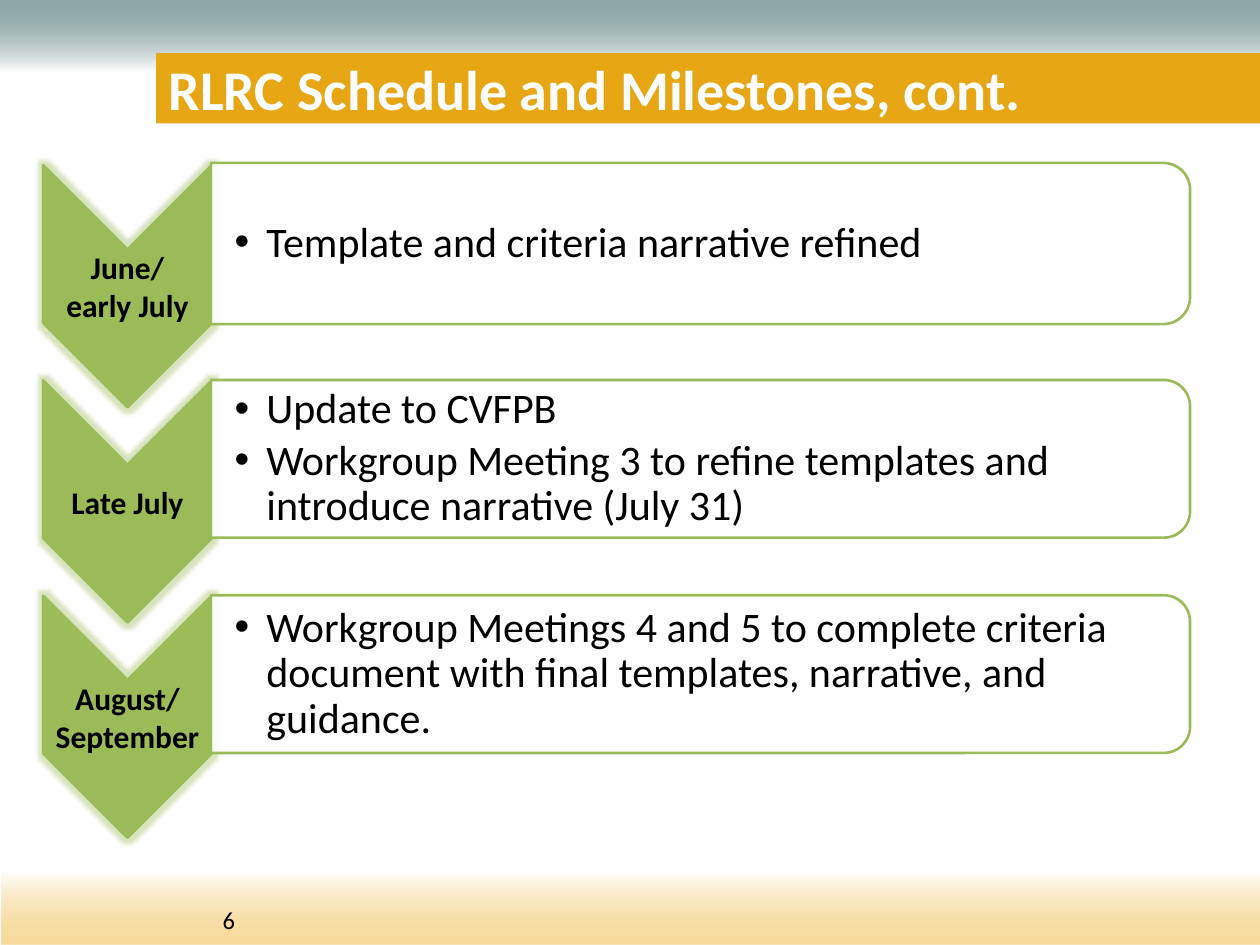
from dataclasses import dataclass

import lxml.etree
import pptx
import pptx.dml.color
import pptx.enum.shapes
import pptx.enum.text
import pptx.oxml
import pptx.oxml.ns
import pptx.util
from pptx.util import Cm, Pt

RGBColor = pptx.dml.color.RGBColor
ShapeType = pptx.enum.shapes.MSO_SHAPE
Anchor = pptx.enum.text.MSO_ANCHOR
Align = pptx.enum.text.PP_ALIGN
AutoSize = pptx.enum.text.MSO_AUTO_SIZE
qn = pptx.oxml.ns.qn

TEAL = RGBColor(0x21, 0x53, 0x52)
GOLD = RGBColor(0xEE, 0xB8, 0x40)
ORANGE = RGBColor(0xE7, 0xA6, 0x14)
GREEN = RGBColor(0x9B, 0xBB, 0x59)
WHITE = RGBColor(0xFF, 0xFF, 0xFF)
BLACK = RGBColor(0x00, 0x00, 0x00)

FONT = "Calibri"
FIRST_PANEL_CENTER = 4.91
ROW_PITCH = 4.34
CHEVRON_DROP = 0.86
CHEVRON_CENTER_X = 2.57
CHEVRON_LENGTH = 4.88
CHEVRON_WIDTH = 3.4
LABEL_HEIGHT = 1.47
PANEL_CENTER_X = 14.12
PANEL_LENGTH = 19.74
LIST_MARGIN = 0.16


@dataclass
class Band:
    left: float
    top: float
    width: float
    height: float
    color: RGBColor
    angle: int


@dataclass
class Milestone:
    label: list[str]
    items: list[str]
    placeholder_index: int
    panel_height: float


BANDS = [
    Band(-0.03, 0, 25.48, 2.77, TEAL, 270),
    Band(0.03, 16.23, 25.37, 2.82, GOLD, 90),
]

MILESTONES = [
    Milestone(["June/", "early July"], ["Template and criteria narrative refined"], 1, 3.25),
    Milestone(
        ["Late July"],
        [
            "Update to CVFPB",
            "Workgroup Meeting 3 to refine templates and introduce narrative (July 31)",
        ],
        2,
        3.18,
    ),
    Milestone(
        ["August/", "September"],
        [
            "Workgroup Meetings 4 and 5 to complete criteria document "
            "with final templates, narrative, and guidance."
        ],
        3,
        3.18,
    ),
]


def place(shape, left: float, top: float, width: float, height: float) -> None:
    shape.left, shape.top = Cm(left), Cm(top)
    shape.width, shape.height = Cm(width), Cm(height)


def add_run(paragraph, text: str, size: float, color: RGBColor, bold: bool = False) -> None:
    run = paragraph.add_run()
    run.text = text
    run.font.name = FONT
    run.font.size = Pt(size)
    run.font.bold = bold
    run.font.color.rgb = color


def set_alpha(color_element, percent: int) -> None:
    alpha = lxml.etree.SubElement(color_element, qn("a:alpha"))
    alpha.set("val", str(percent * 1000))


def set_frame(frame, margins: tuple[float, float, float, float]) -> None:
    frame.word_wrap = True
    frame.auto_size = AutoSize.NONE
    frame.vertical_anchor = Anchor.MIDDLE
    frame.margin_left, frame.margin_top, frame.margin_right, frame.margin_bottom = map(Cm, margins)


def add_band(slide, band: Band) -> None:
    shape = slide.shapes.add_shape(
        ShapeType.RECTANGLE, Cm(band.left), Cm(band.top), Cm(band.width), Cm(band.height)
    )
    shape.shadow.inherit = False
    shape.line.fill.background()
    shape.fill.gradient()
    shape.fill.gradient_angle = band.angle
    start, end = shape.fill.gradient_stops
    start.position, start.color.rgb = 0, band.color
    end.position, end.color.rgb = 0.52, WHITE
    set_alpha(next(shape.element.iter(qn("a:srgbClr"))), 51)


def add_turned_shape(slide, kind, center_x: float, center_y: float,
                     width: float, height: float, fill: RGBColor):
    shape = slide.shapes.add_shape(
        kind, Cm(center_x - width / 2), Cm(center_y - height / 2), Cm(width), Cm(height)
    )
    shape.rotation = 90
    shape.shadow.inherit = False
    shape.fill.solid()
    shape.fill.fore_color.rgb = fill
    shape.line.color.rgb = GREEN
    shape.line.width = Pt(1.5)
    return shape


def add_glow(shape) -> None:
    effects = next(shape.element.iter(qn("a:effectLst")))
    glow = lxml.etree.SubElement(effects, qn("a:glow"), rad=str(Pt(5)))
    color = lxml.etree.SubElement(glow, qn("a:srgbClr"), val=str(GREEN))
    set_alpha(color, 40)


def add_label(slide, lines: list[str], center_y: float) -> None:
    box = slide.shapes.add_textbox(
        Cm(CHEVRON_CENTER_X - CHEVRON_WIDTH / 2), Cm(center_y - LABEL_HEIGHT / 2),
        Cm(CHEVRON_WIDTH), Cm(LABEL_HEIGHT),
    )
    frame = box.text_frame
    set_frame(frame, (0.03, 0.03, 0.03, 0.03))
    for index, line in enumerate(lines):
        paragraph = frame.add_paragraph() if index else frame.paragraphs[0]
        paragraph.alignment = Align.CENTER
        add_run(paragraph, line, 18, BLACK, True)


def set_bullet(paragraph) -> None:
    properties = paragraph._p.get_or_add_pPr()
    properties.set("marL", str(Cm(0.64)))
    properties.set("indent", str(Cm(-0.64)))
    lxml.etree.SubElement(properties, qn("a:buFont"), typeface="Arial")
    lxml.etree.SubElement(properties, qn("a:buChar"), char="•")


def fill_list(slide, milestone: Milestone, center_y: float) -> None:
    placeholder = slide.placeholders[milestone.placeholder_index]
    height = milestone.panel_height - 2 * LIST_MARGIN
    place(placeholder, PANEL_CENTER_X - PANEL_LENGTH / 2, center_y - height / 2,
          PANEL_LENGTH - LIST_MARGIN, height)
    slide.shapes.element.append(placeholder.element)
    frame = placeholder.text_frame
    set_frame(frame, (0.48, 0.05, 0.05, 0.05))
    for index, item in enumerate(milestone.items):
        paragraph = frame.add_paragraph() if index else frame.paragraphs[0]
        set_bullet(paragraph)
        paragraph.alignment = Align.LEFT
        paragraph.line_spacing = 0.9
        paragraph.space_before = Pt(0)
        paragraph.space_after = Pt(3.6)
        add_run(paragraph, item, 24, BLACK)


def add_milestone(slide, milestone: Milestone, center_y: float) -> None:
    chevron_y = center_y + CHEVRON_DROP
    chevron = add_turned_shape(slide, ShapeType.CHEVRON, CHEVRON_CENTER_X, chevron_y,
                               CHEVRON_LENGTH, CHEVRON_WIDTH, GREEN)
    add_glow(chevron)
    add_label(slide, milestone.label, chevron_y)
    panel = add_turned_shape(slide, ShapeType.ROUND_2_SAME_RECTANGLE, PANEL_CENTER_X, center_y,
                             milestone.panel_height, PANEL_LENGTH, WHITE)
    set_alpha(next(panel.element.iter(qn("a:srgbClr"))), 90)
    fill_list(slide, milestone, center_y)


def add_title(slide) -> None:
    bar = slide.shapes.add_shape(ShapeType.RECTANGLE, Cm(3.15), Cm(1.07), Cm(22.25), Cm(1.42))
    bar.shadow.inherit = False
    bar.fill.solid()
    bar.fill.fore_color.rgb = ORANGE
    bar.line.fill.background()
    title = slide.shapes.title
    place(title, 3.15, 1.04, 22.25, 1.47)
    slide.shapes.element.append(title.element)
    set_frame(title.text_frame, (0.25, 0.13, 0.25, 0.13))
    paragraph = title.text_frame.paragraphs[0]
    paragraph.alignment = Align.LEFT
    add_run(paragraph, "RLRC Schedule and Milestones, cont.", 32, WHITE, True)


def main() -> None:
    presentation = pptx.Presentation()
    presentation.slide_width, presentation.slide_height = Cm(25.4), Cm(19.05)
    slide = presentation.slides.add_slide(presentation.slide_layouts.get_by_name("Comparison"))
    unused = slide.placeholders[4].element
    unused.getparent().remove(unused)
    for band in BANDS:
        add_band(slide, band)
    number = slide.shapes.add_textbox(Cm(4.24), Cm(18.11), Cm(2.16), Cm(0.86))
    number.text_frame.word_wrap = True
    add_run(number.text_frame.paragraphs[0], "6", 14, BLACK)
    add_title(slide)
    for row, milestone in enumerate(MILESTONES):
        add_milestone(slide, milestone, FIRST_PANEL_CENTER + row * ROW_PITCH)
    presentation.save("out.pptx")


if __name__ == "__main__":
    main()
